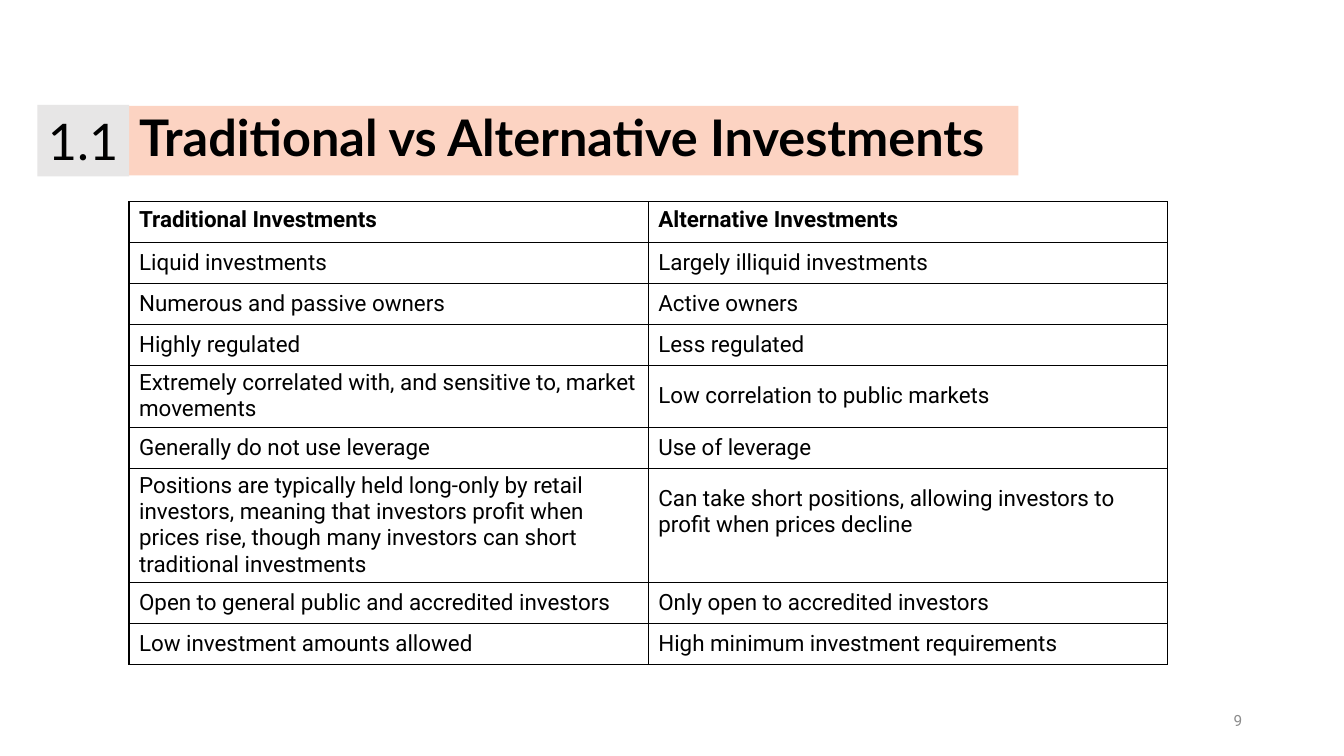
from lxml.etree import SubElement
from pptx import Presentation
from pptx.dml.color import RGBColor
from pptx.enum.shapes import MSO_SHAPE as Preset
from pptx.enum.text import MSO_ANCHOR as Anchor, MSO_AUTO_SIZE as AutoSize, PP_ALIGN as Align
from pptx.oxml.ns import qn
from pptx.util import Inches, Pt

COMPARISON = [
    ("Traditional Investments", "Alternative Investments"),
    ("Liquid investments", "Largely illiquid investments"),
    ("Numerous and passive owners", "Active owners"),
    ("Highly regulated", "Less regulated"),
    ("Extremely correlated with, and sensitive to, market movements",
     "Low correlation to public markets"),
    ("Generally do not use leverage", "Use of leverage"),
    ("Positions are typically held long-only by retail investors, meaning that investors "
     "profit when prices rise, though many investors can short traditional investments",
     "Can take short positions, allowing investors to profit when prices decline"),
    ("Open to general public and accredited investors", "Only open to accredited investors"),
    ("Low investment amounts allowed", "High minimum investment requirements"),
]
SHORT_POSITIONS = (6, 1)


def paint(fill, color):
    fill.solid()
    fill.fore_color.rgb = RGBColor.from_string(color)


def write(frame, text, size, font, color="000000", bold=False, align=Align.LEFT):
    frame.word_wrap = True
    paragraph = frame.paragraphs[0]
    paragraph.alignment = align
    run = paragraph.add_run()
    run.text = text
    run.font.size = Pt(size)
    run.font.name = font
    run.font.bold = bold
    run.font.color.rgb = RGBColor.from_string(color)
    return paragraph


def add_heading(slide, left, top, width, height):
    number_width = 0.91
    title = slide.shapes.title
    title.left, title.top = Inches(left + number_width), Inches(top + 0.01)
    title.width, title.height = Inches(width - number_width), Inches(height - 0.02)
    paint(title.fill, "FCD3C2")
    title.text_frame.auto_size = AutoSize.NONE
    title.text_frame.vertical_anchor = Anchor.MIDDLE
    heading = write(title.text_frame, "Traditional vs Alternative Investments", 36, "Lato", bold=True)
    heading.line_spacing = 0.9

    number = slide.shapes.add_shape(
        Preset.RECTANGLE, Inches(left), Inches(top), Inches(number_width), Inches(height))
    number.shadow.inherit = False
    paint(number.fill, "E7E6E6")
    number.line.fill.background()
    number.text_frame.vertical_anchor = Anchor.TOP
    write(number.text_frame, "1.1", 36, "Lato", align=Align.CENTER)


def add_borders(cell, color, width):
    properties = cell._tc.get_or_add_tcPr()
    for side in ("a:lnL", "a:lnR", "a:lnT", "a:lnB"):
        border = SubElement(properties, qn(side), w=str(Pt(width)))
        SubElement(SubElement(border, qn("a:solidFill")), qn("a:srgbClr"), val=color)


def add_comparison(slide, left, top, width, height):
    table = slide.shapes.add_table(
        len(COMPARISON), 2, Inches(left), Inches(top), Inches(width), Inches(height)).table
    table.horz_banding = False
    for row, texts in enumerate(COMPARISON):
        for column, text in enumerate(texts):
            cell = table.cell(row, column)
            add_borders(cell, "000000", 1)
            paint(cell.fill, "FFFFFF")
            cell.vertical_anchor = Anchor.MIDDLE if row else Anchor.TOP
            write(cell.text_frame, text, 16, "Roboto", bold=row == 0)
    table.cell(*SHORT_POSITIONS).margin_bottom = Inches(0.31)


def add_page_number(slide, left, top, width, height):
    page = slide.shapes.add_textbox(Inches(left), Inches(top), Inches(width), Inches(height))
    page.text_frame.vertical_anchor = Anchor.MIDDLE
    write(page.text_frame, "9", 11, "Roboto", "8C8C8C", align=Align.RIGHT)


def main():
    deck = Presentation()
    deck.slide_width, deck.slide_height = Inches(13.33), Inches(7.5)
    slide = deck.slides.add_slide(deck.slide_layouts[5])
    paint(slide.background.fill, "FFFFFF")
    add_heading(slide, 0.37, 1.04, 9.73, 0.71)
    add_comparison(slide, 1.28, 2, 10.3, 3.65)
    add_page_number(slide, 9.42, 6.95, 3, 0.4)
    deck.save("out.pptx")


if __name__ == "__main__":
    main()
